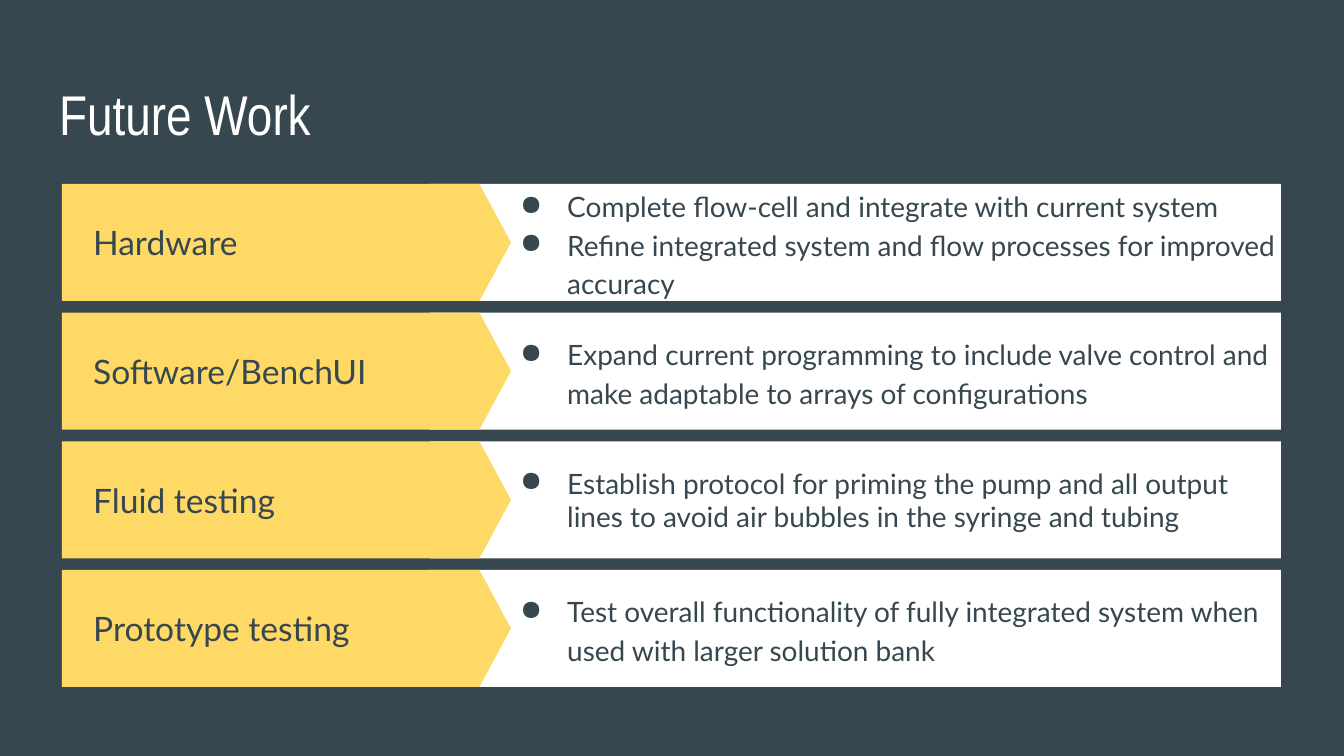
import lxml.etree
import pptx
import pptx.dml.color
import pptx.enum.shapes
import pptx.enum.text
import pptx.oxml.ns
import pptx.util

EMU_PER_PX = 914400 / 134.4
SLATE = pptx.dml.color.RGBColor(0x37, 0x47, 0x4F)
YELLOW = pptx.dml.color.RGBColor(0xFF, 0xD9, 0x66)
WHITE = pptx.dml.color.RGBColor(0xFF, 0xFF, 0xFF)

TOPICS = [
    ("Hardware", 1.15, [
        "Complete flow-cell and integrate with current system",
        "Refine integrated system and flow processes for improved accuracy",
    ]),
    ("Software/BenchUI", 1.15, [
        "Expand current programming to include valve control and "
        "make adaptable to arrays of configurations",
    ]),
    ("Fluid testing", 1.0, [
        "Establish protocol for priming the pump and all output "
        "lines to avoid air bubbles in the syringe and tubing",
    ]),
    ("Prototype testing", 1.15, [
        "Test overall functionality of fully integrated system when "
        "used with larger solution bank",
    ]),
]


def px(length):
    """Turn a length in px into EMU."""
    return pptx.util.Emu(round(length * EMU_PER_PX))


def add_panel(shapes, preset, color, left, top, width, height):
    """Add a flat filled shape without an outline."""
    panel = shapes.add_shape(preset, px(left), px(top), px(width), px(height))
    panel.shadow.inherit = False
    panel.fill.solid()
    panel.fill.fore_color.rgb = color
    panel.line.fill.background()
    return panel


def add_text_frame(slide, left, top, width, height, anchor):
    """Add a wrapping text box with even insets and return its frame."""
    frame = slide.shapes.add_textbox(px(left), px(top), px(width), px(height)).text_frame
    frame.word_wrap = True
    frame.vertical_anchor = anchor
    frame.margin_left = frame.margin_right = pptx.util.Inches(0.1)
    frame.margin_top = frame.margin_bottom = pptx.util.Inches(0.1)
    return frame


def add_run(paragraph, text, font_name, size, color):
    """Add one styled run to a paragraph."""
    run = paragraph.add_run()
    run.text = text
    run.font.name = font_name
    run.font.size = pptx.util.Pt(size)
    run.font.color.rgb = color


def add_bullet(paragraph):
    """Give a paragraph a hanging round bullet."""
    properties = paragraph._p.get_or_add_pPr()
    properties.set("marL", str(px(67)))
    properties.set("indent", str(-px(47)))
    qn = pptx.oxml.ns.qn
    bullet_color = lxml.etree.SubElement(properties, qn("a:buClr"))
    lxml.etree.SubElement(bullet_color, qn("a:srgbClr"), val=str(SLATE))
    lxml.etree.SubElement(properties, qn("a:buChar"), char="●")


def add_title(slide, left, top, width, height):
    """Place the slide title in its box."""
    frame = add_text_frame(slide, left, top, width, height, pptx.enum.text.MSO_ANCHOR.TOP)
    add_run(frame.paragraphs[0], "Future Work", "Arial Narrow", 30, WHITE)


def add_topic_row(slide, left, top, width, height, topic, spacing, tasks):
    """Place a topic arrow and its list of tasks on a white band."""
    presets = pptx.enum.shapes.MSO_SHAPE
    middle = pptx.enum.text.MSO_ANCHOR.MIDDLE
    band = slide.shapes.add_group_shape()
    add_panel(band.shapes, presets.RECTANGLE, WHITE, left + 368, top, width - 368, height)
    arrow = add_panel(band.shapes, presets.PENTAGON, YELLOW, left, top, 449, height)
    arrow.adjustments[0] = 0.27

    topic_frame = add_text_frame(slide, left + 18, top, 356, height, middle)
    add_run(topic_frame.paragraphs[0], topic, "Lato", 18, SLATE)

    task_frame = add_text_frame(slide, left + 425, top, 802, height, middle)
    for index, task in enumerate(tasks):
        paragraph = task_frame.add_paragraph() if index else task_frame.paragraphs[0]
        add_bullet(paragraph)
        paragraph.line_spacing = spacing
        add_run(paragraph, task, "Lato", 15, SLATE)


def add_topic_rows(slide, left, top, width, height, row_height):
    """Spread the topic rows evenly over the box."""
    pitch = (height - row_height) / (len(TOPICS) - 1)
    for index, (topic, spacing, tasks) in enumerate(TOPICS):
        row_top = top + index * pitch
        add_topic_row(slide, left, row_top, width, row_height, topic, spacing, tasks)


def main():
    """Build the slide and save it."""
    presentation = pptx.Presentation()
    presentation.slide_width = px(1344)
    presentation.slide_height = px(756)
    slide = presentation.slides.add_slide(presentation.slide_layouts[6])
    slide.background.fill.solid()
    slide.background.fill.fore_color.rgb = SLATE
    add_title(slide, 46, 66, 1252, 85)
    add_topic_rows(slide, 62, 184, 1219, 503, 117)
    presentation.save("out.pptx")


if __name__ == "__main__":
    main()
